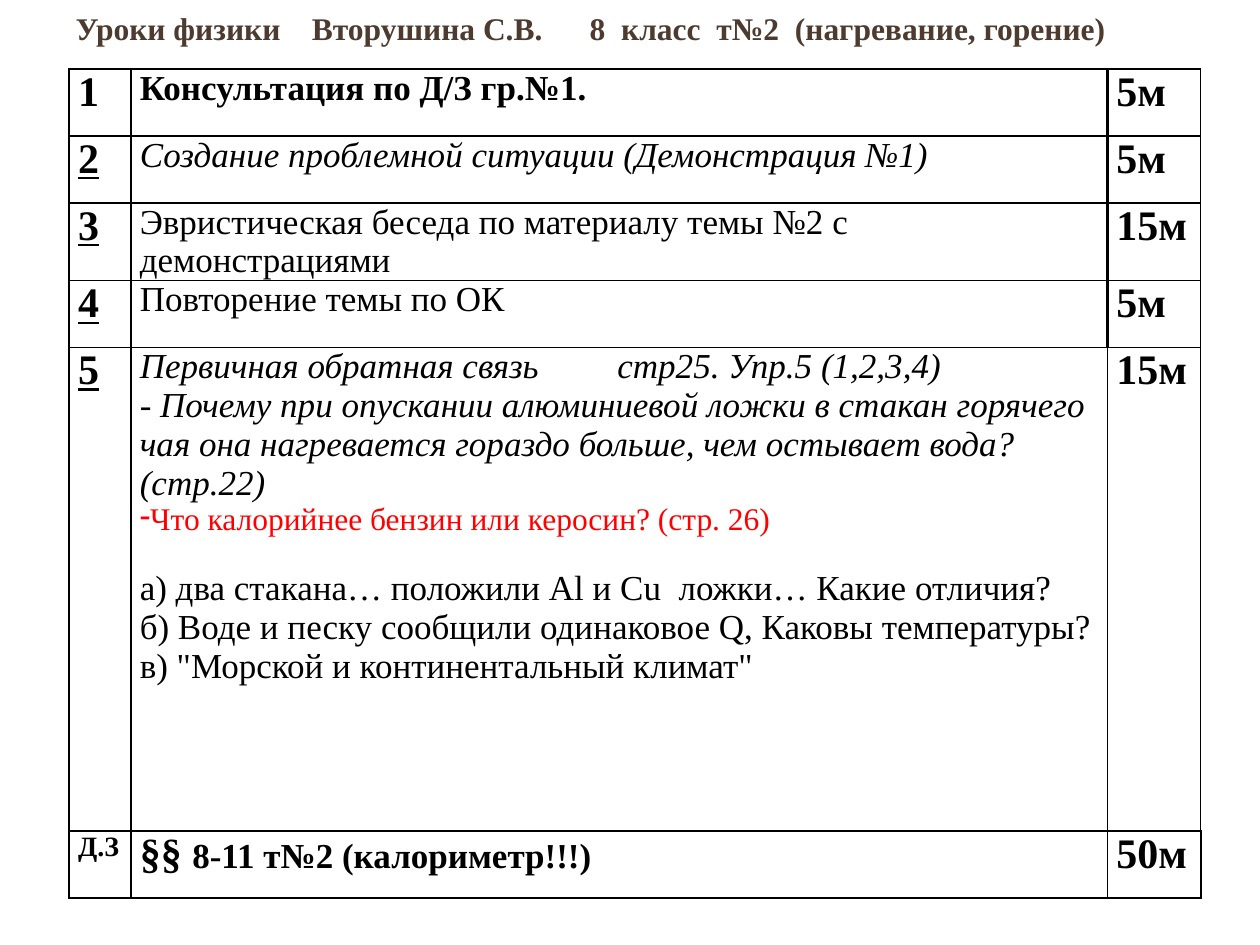
from dataclasses import dataclass

from lxml import etree
from pptx import Presentation
from pptx import util as u
from pptx.dml.color import RGBColor
from pptx.enum import text
from pptx.oxml import ns


@dataclass(frozen=True)
class Theme:
    """Colours, type sizes and line widths."""
    font: str = "Times New Roman"
    title: str = "4E3B30"
    ink: str = "000000"
    accent: str = "FF0000"
    large: int = 24
    body: int = 20
    small: int = 18
    label: int = 16
    thin: float = 1
    heavy: float = 1.5


THEME = Theme()
TITLE = "Уроки физики    Вторушина С.В.      8  класс  т№2  (нагревание, горение)"
COLUMN_WIDTHS = (0.49, 7.75, 0.74)
ROW_HEIGHTS = (0.53, 0.53, 0.53, 0.53, 3.84, 0.53)
BOLD = {"bold": True}
ITALIC = {"italic": True}
MARK = {"size": THEME.large, "bold": True}
NUMBER = {**MARK, "underline": True}
LABEL = {"size": THEME.label, "bold": True}

LESSON_ROWS = [
    ("1", MARK, [[("Консультация по Д/З гр.№1.", BOLD)]], "5м"),
    ("2", NUMBER, [[("Создание проблемной ситуации (Демонстрация №1)", ITALIC)]], "5м"),
    ("3", NUMBER, [[("Эвристическая беседа по материалу темы №2 с демонстрациями", {})]], "15м"),
    ("4", NUMBER, [[("Повторение темы по ОК", {})]], "5м"),
    ("5", NUMBER, [
        [("Первичная обратная связь         стр25. Упр.5 (1,2,3,4)", ITALIC)],
        [("- Почему при опускании алюминиевой ложки в стакан горячего чая она "
          "нагревается гораздо больше, чем остывает вода? (стр.22)", ITALIC)],
        [("Что калорийнее бензин или керосин? (стр. 26)",
          {"size": THEME.small, "color": THEME.accent, "bullet": "-"})],
        [("а) два стакана… положили Al и Cu  ложки… Какие отличия?", {"before": 18})],
        [("б) Воде и песку сообщили одинаковое Q, Каковы температуры?", {})],
        [('в) "Морской и континентальный климат"', {})],
    ], "15м"),
    ("Д.З", LABEL, [[("§§ ", MARK), ("8-11 т№2 (калориметр!!!)", BOLD)]], "50м"),
]


def write(paragraph, words, size=THEME.body, color=THEME.ink, bold=False,
          italic=False, underline=False, before=0, bullet=None):
    """Append a formatted run and set its paragraph's spacing and bullet."""
    run = paragraph.add_run()
    run.text = words
    font = run.font
    font.name, font.size = THEME.font, u.Pt(size)
    font.bold, font.italic, font.underline = bold, italic, underline
    font.color.rgb = RGBColor.from_string(color)
    if before:
        paragraph.space_before = u.Pt(before)
    if bullet:
        properties = paragraph._p.get_or_add_pPr()
        properties.set("marL", "0")
        properties.set("indent", "0")
        etree.SubElement(properties, ns.qn("a:buChar")).set("char", bullet)


def draw_borders(cell, widths):
    """Give a cell its left, right, top and bottom border widths."""
    properties = cell._tc.get_or_add_tcPr()
    for index, (side, width) in enumerate(zip("LRTB", widths)):
        line = etree.Element(ns.qn(f"a:ln{side}"), w=str(u.Pt(width)))
        fill = etree.SubElement(line, ns.qn("a:solidFill"))
        etree.SubElement(fill, ns.qn("a:srgbClr")).set("val", THEME.ink)
        properties.insert(index, line)


def vertical_width(row, edge):
    """Return the width of a vertical grid line beside a row."""
    last = len(ROW_HEIGHTS) - 1
    heavy = edge == 0 or (edge < 3 and row < 4) or (edge == 3 and row == last)
    return THEME.heavy if heavy else THEME.thin


def horizontal_width(edge):
    """Return the width of a horizontal grid line."""
    return THEME.heavy if edge in (0, 5, 6) else THEME.thin


def fill_cell(cell, paragraphs):
    """Write paragraphs of runs into a plain cell."""
    cell.fill.background()
    cell.margin_left = cell.margin_right = u.Inches(0.07)
    cell.margin_top = cell.margin_bottom = 0
    frame = cell.text_frame
    for index, runs in enumerate(paragraphs):
        paragraph = frame.add_paragraph() if index else frame.paragraphs[0]
        paragraph.alignment = text.PP_ALIGN.LEFT
        for words, style in runs:
            write(paragraph, words, **style)


def place_title(slide, left, top, width, height):
    """Place the lesson heading in the title placeholder."""
    title = slide.shapes.title
    title.left, title.top, title.width, title.height = left, top, width, height
    title.text_frame.vertical_anchor = text.MSO_ANCHOR.MIDDLE
    paragraph = title.text_frame.paragraphs[0]
    paragraph.alignment = text.PP_ALIGN.LEFT
    write(paragraph, TITLE, size=THEME.small, color=THEME.title, bold=True)


def place_plan(slide, left, top, width, height):
    """Place the table of lesson stages and their durations."""
    table = slide.shapes.add_table(len(ROW_HEIGHTS), len(COLUMN_WIDTHS),
                                   left, top, width, height).table
    table.first_row = table.horz_banding = False
    for column, size in zip(table.columns, COLUMN_WIDTHS):
        column.width = u.Inches(size)
    for row, size in zip(table.rows, ROW_HEIGHTS):
        row.height = u.Inches(size)
    for row, (number, style, stage, duration) in enumerate(LESSON_ROWS):
        contents = ([[(number, style)]], stage, [[(duration, MARK)]])
        for column, paragraphs in enumerate(contents):
            cell = table.cell(row, column)
            fill_cell(cell, paragraphs)
            draw_borders(cell, (vertical_width(row, column),
                                vertical_width(row, column + 1),
                                horizontal_width(row),
                                horizontal_width(row + 1)))


def main():
    """Build and save the lesson plan."""
    presentation = Presentation()
    presentation.slide_width = u.Inches(10)
    presentation.slide_height = u.Inches(7.5)
    slide = presentation.slides.add_slide(presentation.slide_layouts[5])
    place_title(slide, u.Inches(0.5), u.Inches(0), u.Inches(9.11), u.Inches(0.45))
    place_plan(slide, u.Inches(0.55), u.Inches(0.55),
               u.Inches(sum(COLUMN_WIDTHS)), u.Inches(sum(ROW_HEIGHTS)))
    presentation.save("out.pptx")


if __name__ == "__main__":
    main()
